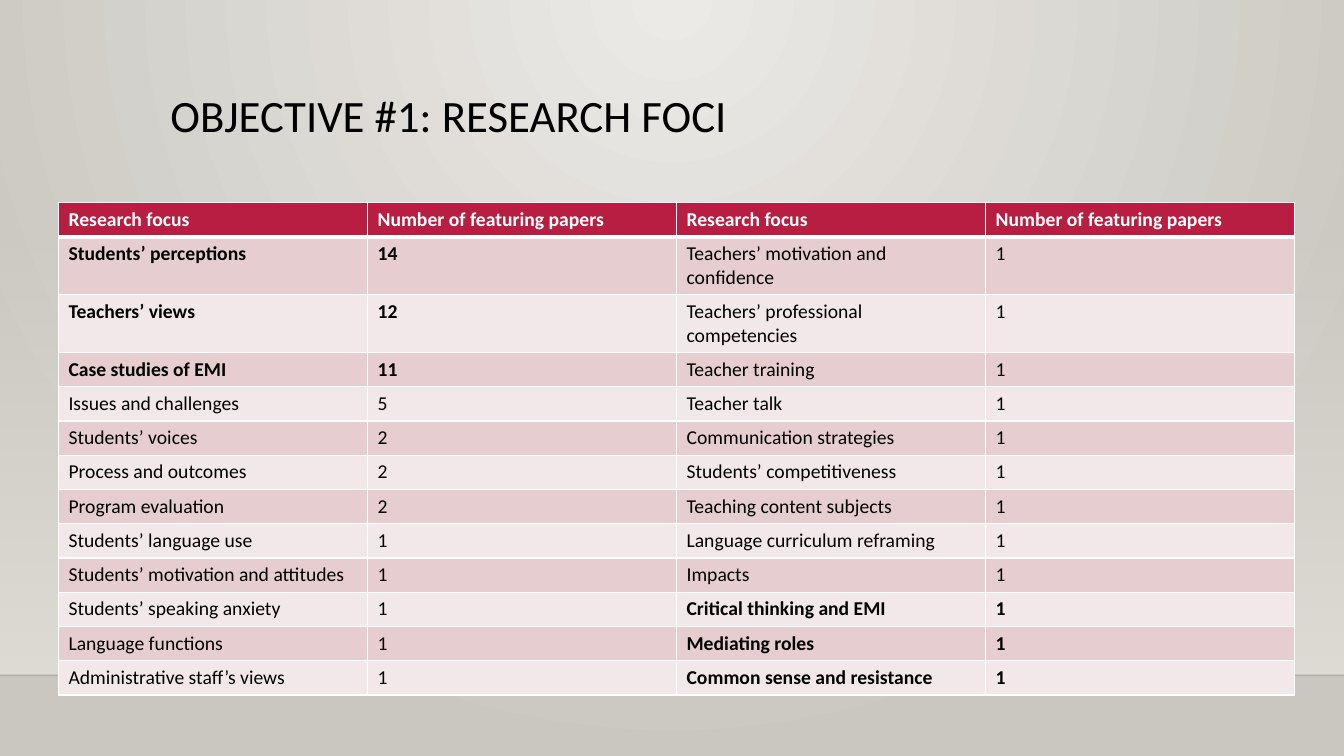
"""Build the slide that lists research foci and their paper counts."""
from lxml import etree
from pptx import Presentation
from pptx.dml.color import RGBColor
from pptx.enum import shapes, text
from pptx.oxml import parse_xml
from pptx.oxml.ns import nsdecls, qn
from pptx.util import Inches, Pt

BLACK = RGBColor(0x00, 0x00, 0x00)
WHITE = RGBColor(0xFF, 0xFF, 0xFF)
RED = RGBColor(0xB7, 0x1E, 0x42)
ROSE = RGBColor(0xE6, 0xCD, 0xCF)
PALE = RGBColor(0xF3, 0xE8, 0xE9)
SAND = RGBColor(0xDF, 0xDB, 0xD5)
LIGHT = RGBColor(0xEC, 0xEA, 0xE7)
DARK = RGBColor(0xCA, 0xC7, 0xC1)

HEAD = ("Research focus", "Number of featuring papers")
LEFT = [
    ("Students’ perceptions", 14), ("Teachers’ views", 12),
    ("Case studies of EMI", 11), ("Issues and challenges", 5),
    ("Students’ voices", 2), ("Process and outcomes", 2),
    ("Program evaluation", 2), ("Students’ language use", 1),
    ("Students’ motivation and attitudes", 1),
    ("Students’ speaking anxiety", 1), ("Language functions", 1),
    ("Administrative staff’s views", 1),
]
RIGHT = [(name, 1) for name in (
    "Teachers’ motivation and confidence",
    "Teachers’ professional competencies", "Teacher training",
    "Teacher talk", "Communication strategies",
    "Students’ competitiveness", "Teaching content subjects",
    "Language curriculum reframing", "Impacts",
    "Critical thinking and EMI", "Mediating roles",
    "Common sense and resistance",
)]


def write(frame, words, size=14, color=BLACK, bold=False, space=1.0):
    para = frame.paragraphs[0]
    para.line_spacing = space
    run = para.add_run()
    run.text = words
    run.font.name = "Calibri"
    run.font.size = Pt(size)
    run.font.bold = bold
    run.font.color.rgb = color


def edge(cell, side, width):
    return parse_xml(
        f'<a:{side} {nsdecls("a")} w="{Pt(width)}"><a:solidFill>'
        f'<a:srgbClr val="{WHITE}"/></a:solidFill></a:{side}>')


deck = Presentation()
deck.slide_width, deck.slide_height = Inches(13.33), Inches(7.5)
slide = deck.slides.add_slide(deck.slide_layouts[5])

fill = slide.background.fill
fill.gradient()
for stop, color in zip(fill.gradient_stops, (LIGHT, DARK)):
    stop.color.rgb = color
grad = slide.background._cSld.find(".//" + qn("a:gradFill"))
grad.replace(grad.find(qn("a:lin")), parse_xml(
    f'<a:path {nsdecls("a")} path="circle">'
    '<a:fillToRect l="43000" t="0" r="43000" b="100000"/></a:path>'))

wall = slide.shapes.add_shape(
    shapes.MSO_SHAPE.RECTANGLE, 0, Inches(2.21), Inches(13.33), Inches(4.49))
wall.shadow.inherit = False
wall.line.fill.background()
wall.fill.gradient()
wall.fill.gradient_angle = 270
for stop in wall.fill.gradient_stops:
    stop.color.rgb = SAND
clear = wall._element.spPr.find(".//" + qn("a:srgbClr"))
etree.SubElement(clear, qn("a:alpha"), val="0")

floor = slide.shapes.add_connector(
    shapes.MSO_CONNECTOR.STRAIGHT, 0, Inches(6.7), Inches(13.33), Inches(6.7))
floor.line.width = Pt(1)
floor.line.color.rgb = BLACK
shade = floor._element.spPr.find(".//" + qn("a:srgbClr"))
etree.SubElement(shade, qn("a:alpha"), val="20000")
etree.SubElement(floor._element.spPr, qn("a:effectLst"))

title = slide.shapes.title
title.left, title.top = Inches(1.59), Inches(0.88)
title.width, title.height = Inches(10.5), Inches(1.15)
title.text_frame.vertical_anchor = text.MSO_ANCHOR.TOP
write(title.text_frame, "OBJECTIVE #1: RESEARCH FOCI", size=32, space=0.9)
title.text_frame.paragraphs[0].alignment = text.PP_ALIGN.LEFT

rows = [HEAD * 2] + [a + b for a, b in zip(LEFT, RIGHT)]
table = slide.shapes.add_table(
    len(rows), 4, Inches(0.58), Inches(2.01),
    Inches(12.26), Inches(0.34 * len(rows))).table
for col in table.columns:
    col.width = Inches(3.065)
for r, row in enumerate(rows):
    table.rows[r].height = Inches(0.34)
    for c, value in enumerate(row):
        cell = table.cell(r, c)
        cell.fill.solid()
        cell.fill.fore_color.rgb = RED if r == 0 else (PALE, ROSE)[r % 2]
        strong = r == 0 or (r <= 3 if c < 2 else r >= 10)
        write(cell.text_frame, str(value),
              color=BLACK if r else WHITE, bold=strong)
        widths = {"lnL": 1, "lnR": 1,
                  "lnT": 3 if r == 1 else 1, "lnB": 1 if r else 3}
        props = cell._tc.get_or_add_tcPr()
        for spot, (side, width) in enumerate(widths.items()):
            props.insert(spot, edge(cell, side, width))

deck.save("out.pptx")
